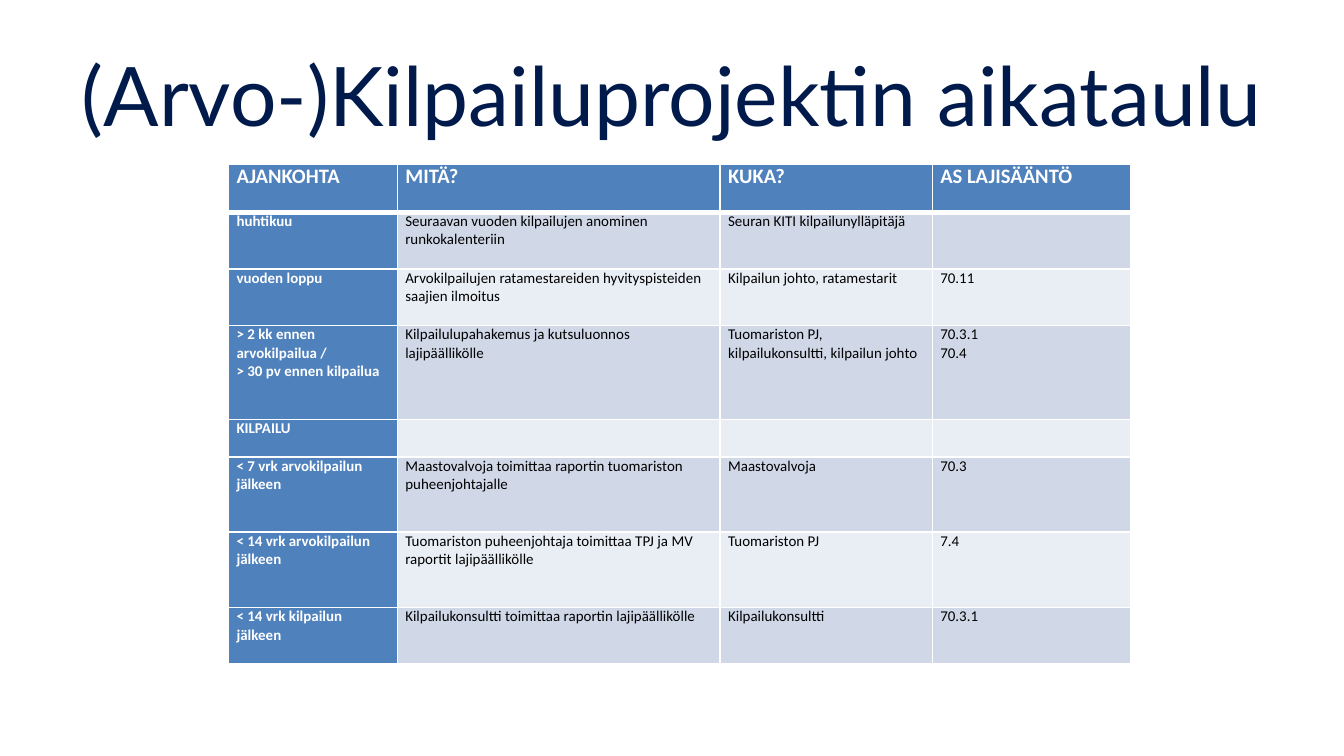
"""Build a slide with the timetable of a competition project."""
from lxml import etree
from pptx import Presentation
from pptx.dml.color import RGBColor
from pptx.enum import text
from pptx.oxml import ns
from pptx.util import Cm, Pt

NAVY = RGBColor(0x00, 0x1A, 0x4B)
BLUE = RGBColor(0x4F, 0x81, 0xBD)
BAND_DARK = RGBColor(0xD0, 0xD8, 0xE8)
BAND_LIGHT = RGBColor(0xE9, 0xED, 0xF4)
WHITE = RGBColor(0xFF, 0xFF, 0xFF)
BLACK = RGBColor(0x00, 0x00, 0x00)

TITLE = "(Arvo-)Kilpailuprojektin aikataulu"
ROWS = [
    ("AJANKOHTA", "MITÄ?", "KUKA?", "AS LAJISÄÄNTÖ"),
    ("huhtikuu", "Seuraavan vuoden kilpailujen anominen runkokalenteriin",
     "Seuran KITI kilpailunylläpitäjä", ""),
    ("vuoden loppu",
     "Arvokilpailujen ratamestareiden hyvityspisteiden saajien ilmoitus",
     "Kilpailun johto, ratamestarit", "70.11"),
    ("> 2 kk ennen arvokilpailua /\n> 30 pv ennen kilpailua",
     "Kilpailulupahakemus ja kutsuluonnos lajipäällikölle",
     "Tuomariston PJ, kilpailukonsultti, kilpailun johto", "70.3.1\n70.4"),
    ("KILPAILU", "", "", ""),
    ("< 7 vrk arvokilpailun jälkeen",
     "Maastovalvoja toimittaa raportin tuomariston puheenjohtajalle",
     "Maastovalvoja", "70.3"),
    ("< 14 vrk arvokilpailun jälkeen",
     "Tuomariston puheenjohtaja toimittaa TPJ ja MV raportit lajipäällikölle",
     "Tuomariston PJ", "7.4"),
    ("< 14 vrk kilpailun jälkeen",
     "Kilpailukonsultti toimittaa raportin lajipäällikölle",
     "Kilpailukonsultti", "70.3.1"),
]
COLUMN_WIDTHS = [3.19, 6.1, 4.01, 3.75]
ROW_HEIGHTS = [0.91, 1.07, 1.07, 1.78, 0.71, 1.42, 1.42, 1.07]


def write(frame, content, *, size, font, color, bold=False, align=None):
    """Fill a text frame, one paragraph per line of content."""
    frame.word_wrap = True
    for index, line in enumerate(content.split("\n")):
        para = frame.add_paragraph() if index else frame.paragraphs[0]
        para.alignment = align
        if not line:
            etree.SubElement(para._p, ns.qn("a:endParaRPr"), sz=str(size * 100))
            continue
        span = para.add_run()
        span.text = line
        span.font.size = Pt(size)
        span.font.name = font
        span.font.bold = bold
        span.font.color.rgb = color


def add_borders(cell, widths):
    """Draw white cell borders with widths in points for each side."""
    properties = cell._tc.get_or_add_tcPr()
    for side, width in widths.items():
        line = etree.SubElement(properties, ns.qn(f"a:ln{side}"), w=str(Pt(width)))
        fill = etree.SubElement(line, ns.qn("a:solidFill"))
        etree.SubElement(fill, ns.qn("a:srgbClr"), val=str(WHITE))


def style_cell(cell, content, row, column):
    """Format one table cell according to its place."""
    label = row == 0 or column == 0
    add_borders(cell, {"L": 1, "R": 1, "T": 3 if row == 1 else 1,
                       "B": 3 if row == 0 else 1})
    cell.margin_left = cell.margin_right = Cm(0.15)
    cell.margin_top = cell.margin_bottom = 0
    cell.fill.solid()
    band = BAND_DARK if row % 2 else BAND_LIGHT
    cell.fill.fore_color.rgb = BLUE if label else band
    write(cell.text_frame, content, size=8 if row else 11, font="Calibri",
          color=WHITE if label else BLACK, bold=label)


def main():
    """Create and save the deck."""
    deck = Presentation()
    deck.slide_width, deck.slide_height = Cm(25.4), Cm(14.29)
    page = deck.slides.add_slide(deck.slide_layouts[6])

    box = page.shapes.add_textbox(Cm(1.27), Cm(0.58), Cm(22.86), Cm(2.39))
    box.text_frame.vertical_anchor = text.MSO_ANCHOR.MIDDLE
    write(box.text_frame, TITLE, size=44, font="Lato", color=NAVY,
          align=text.PP_ALIGN.CENTER)

    table = page.shapes.add_table(
        len(ROWS), len(COLUMN_WIDTHS), Cm(4.32), Cm(3.1),
        Cm(sum(COLUMN_WIDTHS)), Cm(sum(ROW_HEIGHTS))).table
    table.first_row = table.horz_banding = False
    for column, width in zip(table.columns, COLUMN_WIDTHS):
        column.width = Cm(width)
    for row, height in zip(table.rows, ROW_HEIGHTS):
        row.height = Cm(height)
    for row, contents in enumerate(ROWS):
        for column, content in enumerate(contents):
            style_cell(table.cell(row, column), content, row, column)

    deck.save("out.pptx")


if __name__ == "__main__":
    main()
